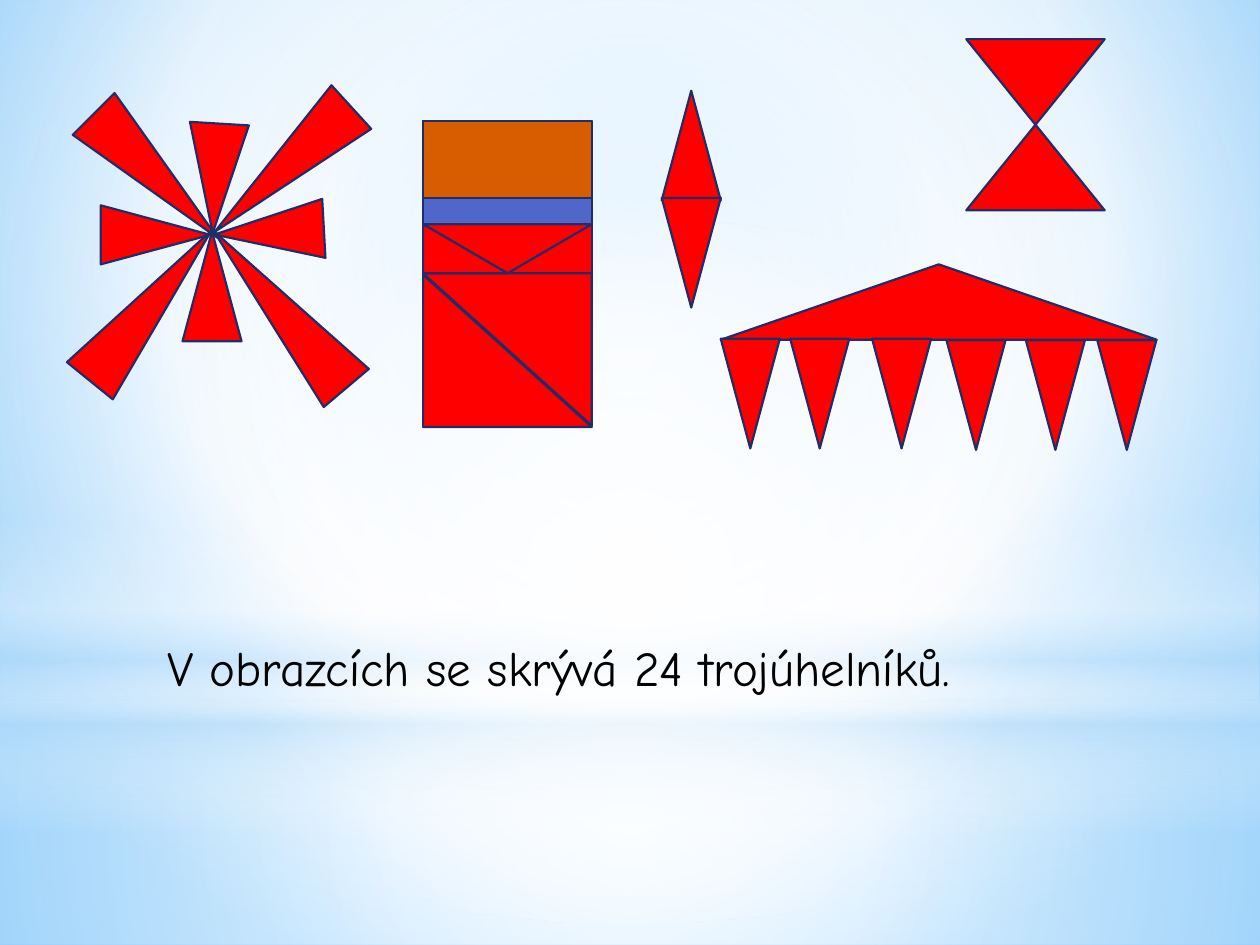
from dataclasses import dataclass

from pptx import Presentation
from pptx.dml.color import RGBColor
from pptx.enum.shapes import MSO_SHAPE
from pptx.enum.text import MSO_AUTO_SIZE
from pptx.oxml import parse_xml
from pptx.oxml.ns import nsdecls
from pptx.util import Cm, Pt


@dataclass(frozen=True)
class Theme:
    red: str = "FF0000"
    blue: str = "4E67C8"
    orange: str = "D85C00"
    outline: str = "1F2E69"
    ink: str = "000000"
    white: str = "FFFFFF"
    haze: str = "B4DCFA"
    sky: str = "9ED5FF"
    deep_sky: str = "5BB9FF"
    font: str = "Comic Neue"
    text_size: float = 28
    outline_width: float = 1.25


theme = Theme()


def set_gradient(owner, fill, stops, focus=None):
    """Fill with (position, colour, opacity) stops: round a focus, or downwards without one."""
    stop_xml = "".join(
        f'<a:gs pos="{position * 1000}"><a:srgbClr val="{color}">'
        f'<a:alpha val="{opacity * 1000}"/></a:srgbClr></a:gs>'
        for position, color, opacity in stops)
    if focus:
        sides = " ".join(f'{side}="{value * 1000}"' for side, value in zip("ltrb", focus))
        direction = f'<a:path path="circle"><a:fillToRect {sides}/></a:path>'
    else:
        direction = '<a:lin ang="5400000" scaled="0"/>'
    fill.solid()
    solid = owner.element.xpath(".//a:solidFill")[0]
    solid.getparent().replace(solid, parse_xml(
        f'<a:gradFill {nsdecls("a")} rotWithShape="1">'
        f"<a:gsLst>{stop_xml}</a:gsLst>{direction}</a:gradFill>"))


def add_text(page, text, left, top, width, height, *, size, color, font):
    box = page.shapes.add_textbox(Cm(left), Cm(top), Cm(width), Cm(height))
    box.text_frame.word_wrap = True
    box.text_frame.auto_size = MSO_AUTO_SIZE.SHAPE_TO_FIT_TEXT
    span = box.text_frame.paragraphs[0].add_run()
    span.text = text
    span.font.size = Pt(size)
    span.font.name = font
    span.font.color.rgb = RGBColor.from_string(color)


deck = Presentation()
deck.slide_width, deck.slide_height = Cm(25.4), Cm(19.05)
page = deck.slides.add_slide(deck.slide_layouts[6])

# Sky: a radial background under soft layers of light
set_gradient(page, page.background.fill,
             [(0, theme.sky, 100), (60, theme.white, 100), (100, theme.deep_sky, 100)],
             focus=(20, 10, 20, 60))
center = (50, 50, 50, 50)
layers = [
    (MSO_SHAPE.RECTANGLE, 14.17, 4.88, center,
     [(0, theme.white, 91), (37, theme.white, 76), (100, theme.haze, 79)]),
    (MSO_SHAPE.RECTANGLE, 0, 14.17, center,
     [(0, theme.white, 89), (48, theme.white, 62), (100, theme.haze, 79)]),
    (MSO_SHAPE.RECTANGLE, 10.46, 6.35, None,
     [(0, theme.white, 0), (29, theme.white, 30), (45, theme.haze, 40),
      (55, theme.white, 26), (65, theme.haze, 60), (100, theme.white, 0)]),
    (MSO_SHAPE.OVAL, 4.45, 14.17, center,
     [(0, theme.white, 100), (56, theme.white, 0)]),
]
for kind, top, height, focus, stops in layers:
    layer = page.shapes.add_shape(kind, 0, Cm(top), deck.slide_width, Cm(height))
    layer.shadow.inherit = False
    layer.line.fill.background()
    set_gradient(layer, layer.fill, stops, focus)

# Figures: kind, left, top, width, height, rotation, colour
rectangle = MSO_SHAPE.RECTANGLE
triangle = MSO_SHAPE.ISOSCELES_TRIANGLE
right_triangle = MSO_SHAPE.RIGHT_TRIANGLE
blade_width, blade_height = 1.19, 2.21
card_left, card_width = 8.53, 3.4
half_card = card_width / 2
band_top, band_height = 4.52, 0.99

card = [
    (rectangle, card_left, 2.44, card_width, 6.15, 0, theme.blue),
    (rectangle, card_left + half_card, band_top, half_card, 1.02, 0, theme.red),
    (right_triangle, card_left, 5.54, card_width, 3.07, 0, theme.red),
    (rectangle, card_left, 2.44, card_width, 1.55, 0, theme.orange),
    (triangle, card_left, band_top, card_width, band_height, 180, theme.red),
    (right_triangle, card_left, 5.51, card_width, 3.07, 180, theme.red),
    (right_triangle, card_left, band_top, half_card, band_height, 0, theme.red),
]
star = [
    (triangle, left, top, blade_width, height, rotation, theme.red)
    for left, top, height, rotation in [
        (3.68, 4.67, blade_height, 0), (4.83, 3.56, blade_height, 266.8),
        (3.76, 2.49, blade_height, 183.5), (2.54, 3.63, blade_height, 90),
        (2.54, 1.78, 3.53, 135), (5.11, 1.55, 3.73, 227.6),
        (2.44, 4.22, 3.89, 39), (5.05, 4.17, 4.14, 319.8)]
]
diamond = [
    (triangle, 13.34, top, blade_width, blade_height, rotation, theme.red)
    for top, rotation in [(1.83, 0), (3.99, 180)]
]
hourglass = [(MSO_SHAPE.FLOWCHART_COLLATE, 19.48, 0.79, 2.79, 3.45, 0, theme.red)]
roof = [(triangle, 14.53, 5.33, 8.79, 1.52, 0, theme.red)]
fringe = [
    (triangle, left, top, blade_width, blade_height, 180, theme.red)
    for left, top in [(14.53, 6.83), (15.93, 6.83), (17.58, 6.83),
                      (19.08, 6.86), (20.68, 6.86), (22.12, 6.86)]
]
for kind, left, top, width, height, rotation, color in (
        card + star + diamond + hourglass + roof + fringe):
    figure = page.shapes.add_shape(kind, Cm(left), Cm(top), Cm(width), Cm(height))
    figure.rotation = rotation
    figure.shadow.inherit = False
    figure.fill.solid()
    figure.fill.fore_color.rgb = RGBColor.from_string(color)
    figure.line.color.rgb = RGBColor.from_string(theme.outline)
    figure.line.width = Pt(theme.outline_width)

add_text(page, "V obrazcích se skrývá 24 trojúhelníků.", 3.12, 12.73, 18.36, 1.45,
         size=theme.text_size, color=theme.ink, font=theme.font)

deck.save("out.pptx")
